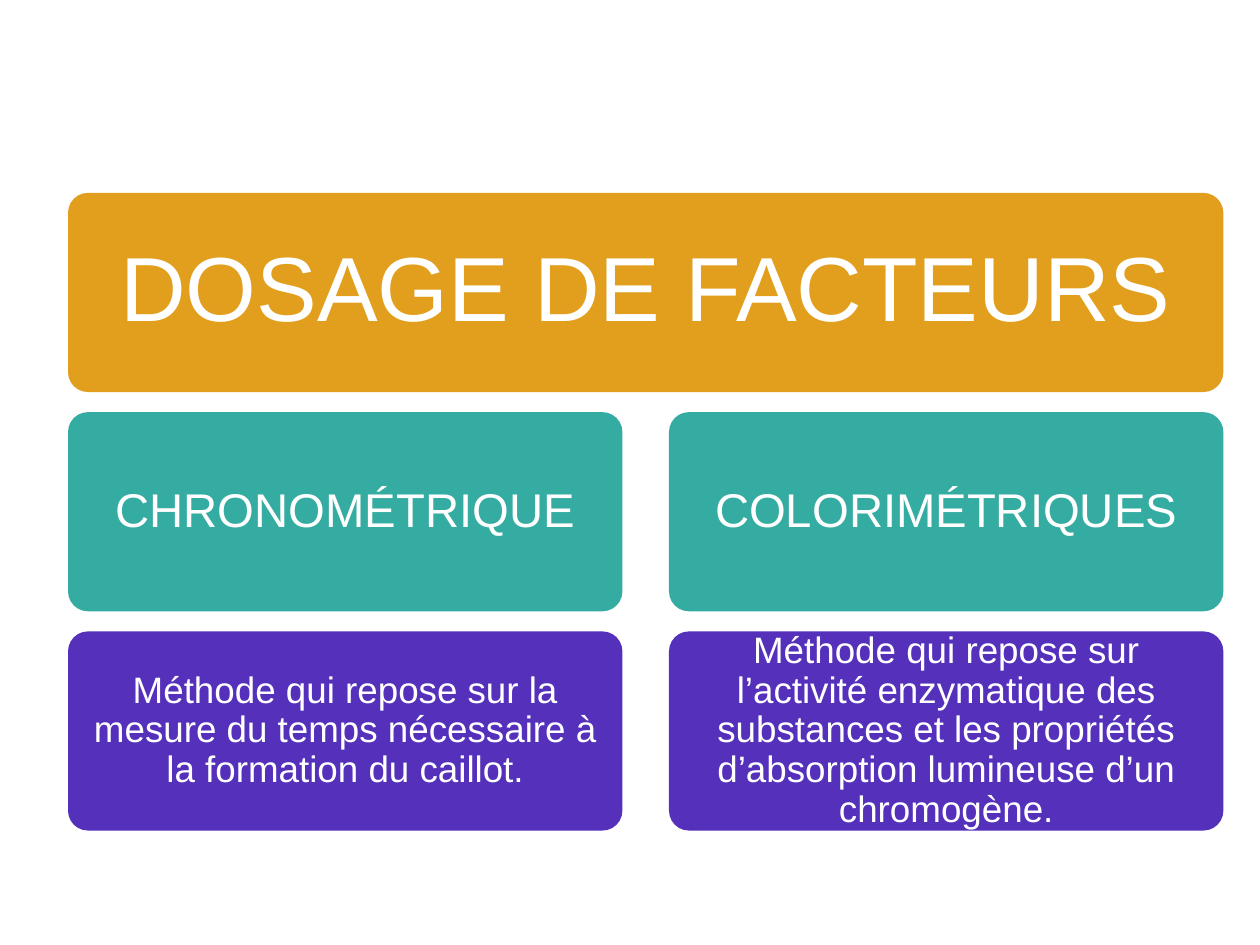
from dataclasses import dataclass

from pptx import Presentation
from pptx.dml.color import RGBColor
from pptx.enum.shapes import MSO_SHAPE
from pptx.enum.text import MSO_ANCHOR, MSO_AUTO_SIZE, PP_ALIGN
from pptx.shapes.autoshape import Shape
from pptx.slide import Slide
from pptx.text.text import TextFrame
from pptx.util import Pt

COLORS = {
    "heading": "E29F1D",
    "method": "35ACA2",
    "definition": "5430BB",
    "text": "FFFFFF",
}

# Grid, in points
LEFT, TOP = 38.9, 110.2
FULL_WIDTH, COLUMN_WIDTH = 660.2, 316.8
ROW_HEIGHT, ROW_PITCH = 113.8, 125.3
COLUMN_PITCH = FULL_WIDTH - COLUMN_WIDTH
CORNER = 0.1
CORNER_INSET = 3.3  # text area of a rounded box starts this far inside


@dataclass(frozen=True)
class Level:
    color: str
    row: int
    size: float
    margin: float


HEADING = Level("heading", 0, 52, 15.6)
METHOD = Level("method", 1, 27, 8.1)
DEFINITION = Level("definition", 2, 21, 6.3)

METHODS = [
    ("CHRONOMÉTRIQUE",
     "Méthode qui repose sur la mesure du temps nécessaire à la formation du caillot."),
    ("COLORIMÉTRIQUES",
     "Méthode qui repose sur l’activité enzymatique des substances et les "
     "propriétés d’absorption lumineuse d’un chromogène."),
]


def write_text(frame: TextFrame, text: str, level: Level) -> None:
    frame.text = text
    margin = Pt(level.margin)
    frame_format = {
        "word_wrap": True,
        "auto_size": MSO_AUTO_SIZE.NONE,
        "vertical_anchor": MSO_ANCHOR.MIDDLE,
        "margin_left": margin,
        "margin_right": margin,
        "margin_top": margin,
        "margin_bottom": margin,
    }
    paragraph = frame.paragraphs[0]
    paragraph_format = {"alignment": PP_ALIGN.CENTER, "line_spacing": 0.9}
    font = paragraph.runs[0].font
    font_format = {"name": "Arial", "size": Pt(level.size)}
    for target, values in ((frame, frame_format), (paragraph, paragraph_format),
                           (font, font_format)):
        for attribute, value in values.items():
            setattr(target, attribute, value)
    font.color.rgb = RGBColor.from_string(COLORS["text"])


def add_box(slide: Slide, level: Level, column: int, width: float) -> Shape:
    box = slide.shapes.add_shape(
        MSO_SHAPE.ROUNDED_RECTANGLE,
        Pt(LEFT + column * COLUMN_PITCH), Pt(TOP + level.row * ROW_PITCH),
        Pt(width), Pt(ROW_HEIGHT))
    box.adjustments[0] = CORNER
    box.shadow.inherit = False
    box.fill.solid()
    box.fill.fore_color.rgb = RGBColor.from_string(COLORS[level.color])
    box.line.fill.background()
    return box


def add_heading(slide: Slide, text: str) -> None:
    banner = add_box(slide, HEADING, 0, FULL_WIDTH)
    title = slide.shapes.title
    inset = Pt(CORNER_INSET)
    place = {
        "left": banner.left + inset,
        "top": banner.top + inset,
        "width": banner.width - 2 * inset,
        "height": banner.height - 2 * inset,
    }
    for attribute, value in place.items():
        setattr(title, attribute, value)
    write_text(title.text_frame, text, HEADING)
    # Bring the title in front of its banner
    banner._element.addnext(title._element)


def main() -> None:
    presentation = Presentation()
    presentation.slide_width, presentation.slide_height = Pt(720), Pt(540)
    slide = presentation.slides.add_slide(presentation.slide_layouts[5])

    # Heading across both columns
    add_heading(slide, "DOSAGE DE FACTEURS")

    # One column per method: name above definition
    for column, texts in enumerate(METHODS):
        for level, text in zip((METHOD, DEFINITION), texts):
            box = add_box(slide, level, column, COLUMN_WIDTH)
            write_text(box.text_frame, text, level)

    presentation.save("out.pptx")


if __name__ == "__main__":
    main()
